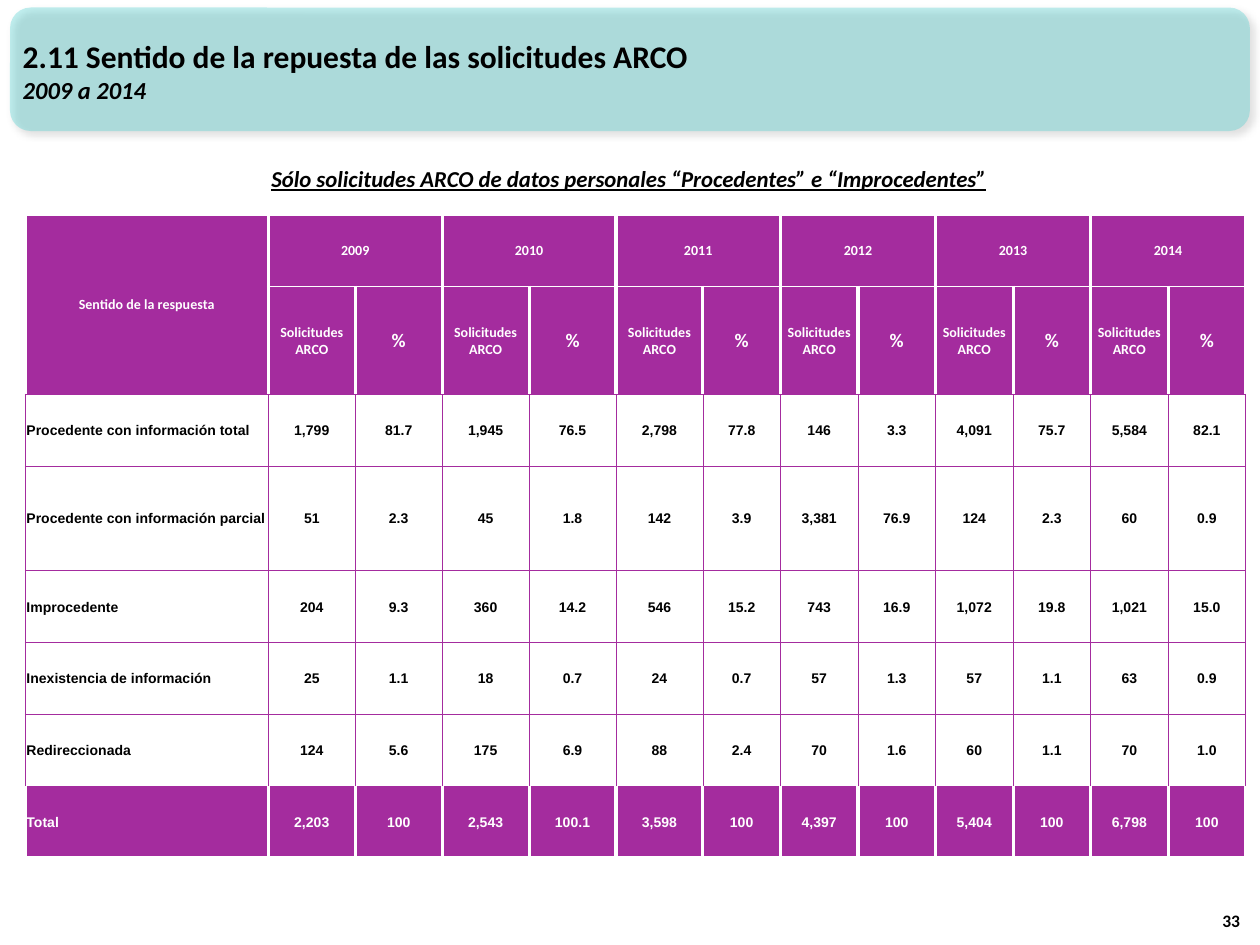
import dataclasses

import lxml.etree
import pptx
import pptx.dml.color
import pptx.enum.shapes
import pptx.enum.text
import pptx.oxml.ns
import pptx.util

Inches = pptx.util.Inches
Pt = pptx.util.Pt
Align = pptx.enum.text.PP_ALIGN
Anchor = pptx.enum.text.MSO_ANCHOR


@dataclasses.dataclass(frozen=True)
class Theme:
    purple: str = "A42C9E"
    teal: str = "33CCCC"
    white: str = "FFFFFF"
    black: str = "000000"
    heading_font: str = "Calibri"
    body_font: str = "Arial"
    title: float = 18
    period: float = 14
    subtitle: float = 13
    percent: float = 11
    number: float = 10
    table: float = 8
    thick: float = 2
    thin: float = 0.5


THEME = Theme()

YEARS = ("2009", "2010", "2011", "2012", "2013", "2014")
ROWS = (
    ("Procedente con información total", "1,799", "81.7", "1,945", "76.5", "2,798", "77.8",
     "146", "3.3", "4,091", "75.7", "5,584", "82.1"),
    ("Procedente con información parcial", "51", "2.3", "45", "1.8", "142", "3.9",
     "3,381", "76.9", "124", "2.3", "60", "0.9"),
    ("Improcedente", "204", "9.3", "360", "14.2", "546", "15.2",
     "743", "16.9", "1,072", "19.8", "1,021", "15.0"),
    ("Inexistencia de información", "25", "1.1", "18", "0.7", "24", "0.7",
     "57", "1.3", "57", "1.1", "63", "0.9"),
    ("Redireccionada", "124", "5.6", "175", "6.9", "88", "2.4",
     "70", "1.6", "60", "1.1", "70", "1.0"),
    ("Total", "2,203", "100", "2,543", "100.1", "3,598", "100",
     "4,397", "100", "5,404", "100", "6,798", "100"),
)
TABLE_WIDTH = 9.69
LABEL_WIDTH = 1.93
WIDE_COLUMNS, WIDE_WIDTH = 5, 0.69
ROW_HEIGHTS = (0.57, 0.86, 0.57, 0.83, 0.57, 0.57, 0.57, 0.57)

WHITE_EDGE = (THEME.white, THEME.thick)
WHITE_LINE = (THEME.white, THEME.thin)
PURPLE_LINE = (THEME.purple, THEME.thin)


def set_attributes(target, values):
    for name, value in values.items():
        setattr(target, name, value)


def add_element(parent, tag, **attributes):
    return lxml.etree.SubElement(parent, pptx.oxml.ns.qn(tag), attributes)


def write_paragraph(paragraph, text, size, color=THEME.black, font=THEME.heading_font,
                    align=Align.LEFT, **styles):
    paragraph.alignment = align
    run = paragraph.add_run()
    run.text = text
    set_attributes(run.font, {"size": Pt(size), "name": font, "bold": True, **styles})
    run.font.color.rgb = pptx.dml.color.RGBColor.from_string(color)


def fill_solid(fill, color):
    fill.solid()
    fill.fore_color.rgb = pptx.dml.color.RGBColor.from_string(color)


def add_banner(slide):
    banner = slide.shapes.add_shape(
        pptx.enum.shapes.MSO_SHAPE.ROUNDED_RECTANGLE,
        Inches(0.08), Inches(0.06), Inches(9.84), Inches(0.98))
    fill_solid(banner.fill, THEME.teal)
    banner.line.fill.background()
    properties = banner._element.spPr
    color = properties.find(".//" + pptx.oxml.ns.qn("a:srgbClr"))
    add_element(color, "a:alpha", val="30000")
    effects = add_element(properties, "a:effectLst")
    shadow = add_element(effects, "a:outerShdw", blurRad=str(Pt(4)), dist=str(Pt(3)),
                         dir="2700000", algn="tl", rotWithShape="0")
    shadow_color = add_element(shadow, "a:srgbClr", val=THEME.black)
    add_element(shadow_color, "a:alpha", val="40000")
    slide.shapes._spTree.insert(2, banner._element)


def add_title(slide):
    title = slide.shapes.title
    set_attributes(title, {"left": Inches(0.08), "top": Inches(0.09),
                           "width": Inches(9.17), "height": Inches(0.94)})
    frame = title.text_frame
    set_attributes(frame, {"word_wrap": True, "vertical_anchor": Anchor.MIDDLE,
                           "auto_size": pptx.enum.text.MSO_AUTO_SIZE.NONE})
    write_paragraph(frame.paragraphs[0],
                    "2.11 Sentido de la repuesta de las solicitudes ARCO", THEME.title)
    write_paragraph(frame.add_paragraph(), "2009 a 2014", THEME.period, italic=True)


def add_text(slide, box, text, size, anchor=Anchor.TOP, **styles):
    frame = slide.shapes.add_textbox(*map(Inches, box)).text_frame
    set_attributes(frame, {"word_wrap": True, "vertical_anchor": anchor})
    write_paragraph(frame.paragraphs[0], text, size, **styles)


def format_cell(cell, left, top, right, bottom, fill=None):
    margin = Inches(0.01)
    set_attributes(cell, {"vertical_anchor": Anchor.MIDDLE, "margin_left": margin,
                          "margin_top": margin, "margin_right": margin, "margin_bottom": 0})
    properties = cell._tc.get_or_add_tcPr()
    for side, (color, width) in zip("LRTB", (left, right, top, bottom)):
        line = add_element(properties, f"a:ln{side}", w=str(Pt(width)))
        add_element(add_element(line, "a:solidFill"), "a:srgbClr", val=color)
    if fill:
        fill_solid(cell.fill, fill)
    else:
        cell.fill.background()


def write_cell(cell, text, size=THEME.table, **styles):
    write_paragraph(cell.text_frame.paragraphs[0], text, size, **styles)


def format_grid(table):
    last = len(table.rows) - 1
    edges = {0: (WHITE_EDGE, WHITE_LINE), 1: (WHITE_LINE, PURPLE_LINE),
             last: (PURPLE_LINE, WHITE_EDGE)}
    for index, row in enumerate(table.rows):
        for cell in row.cells:
            if index in edges:
                top, bottom = edges[index]
                format_cell(cell, WHITE_EDGE, top, WHITE_EDGE, bottom, THEME.purple)
            else:
                format_cell(cell, *[PURPLE_LINE] * 4)


def fill_header(table):
    style = {"color": THEME.white, "align": Align.CENTER}
    table.cell(0, 0).merge(table.cell(1, 0))
    write_cell(table.cell(0, 0), "Sentido de la respuesta", **style)
    for column, year in zip(range(1, len(table.columns), 2), YEARS):
        table.cell(0, column).merge(table.cell(0, column + 1))
        write_cell(table.cell(0, column), year, **style)
        write_cell(table.cell(1, column), "Solicitudes ARCO", **style)
        write_cell(table.cell(1, column + 1), "%", THEME.percent, **style)


def fill_body(table):
    for row, values in enumerate(ROWS, start=2):
        color = THEME.white if values[0] == "Total" else THEME.black
        for column, value in enumerate(values):
            write_cell(table.cell(row, column), value, color=color, font=THEME.body_font,
                       align=Align.CENTER if column else Align.LEFT)


def add_response_table(slide):
    narrow_columns = 2 * len(YEARS) - WIDE_COLUMNS
    narrow_width = (TABLE_WIDTH - LABEL_WIDTH - WIDE_COLUMNS * WIDE_WIDTH) / narrow_columns
    widths = [LABEL_WIDTH] + [WIDE_WIDTH] * WIDE_COLUMNS + [narrow_width] * narrow_columns
    table = slide.shapes.add_table(
        len(ROW_HEIGHTS), len(widths), Inches(0.2), Inches(1.7),
        Inches(TABLE_WIDTH), Inches(sum(ROW_HEIGHTS))).table
    set_attributes(table, {"first_row": False, "horz_banding": False})
    for column, width in zip(table.columns, widths):
        column.width = Inches(width)
    for row, height in zip(table.rows, ROW_HEIGHTS):
        row.height = Inches(height)
    format_grid(table)
    fill_header(table)
    fill_body(table)


def main():
    presentation = pptx.Presentation()
    set_attributes(presentation, {"slide_width": Inches(10), "slide_height": Inches(7.5)})
    slide = presentation.slides.add_slide(presentation.slide_layouts[5])
    add_banner(slide)
    add_title(slide)
    add_text(slide, (1.52, 1.26, 6.94, 0.32),
             "Sólo solicitudes ARCO de datos personales “Procedentes” e “Improcedentes”",
             THEME.subtitle, align=Align.CENTER, italic=True, underline=True)
    add_text(slide, (9.44, 7.04, 0.5, 0.4), "33", THEME.number, Anchor.BOTTOM,
             align=Align.RIGHT)
    add_response_table(slide)
    presentation.save("out.pptx")


if __name__ == "__main__":
    main()
